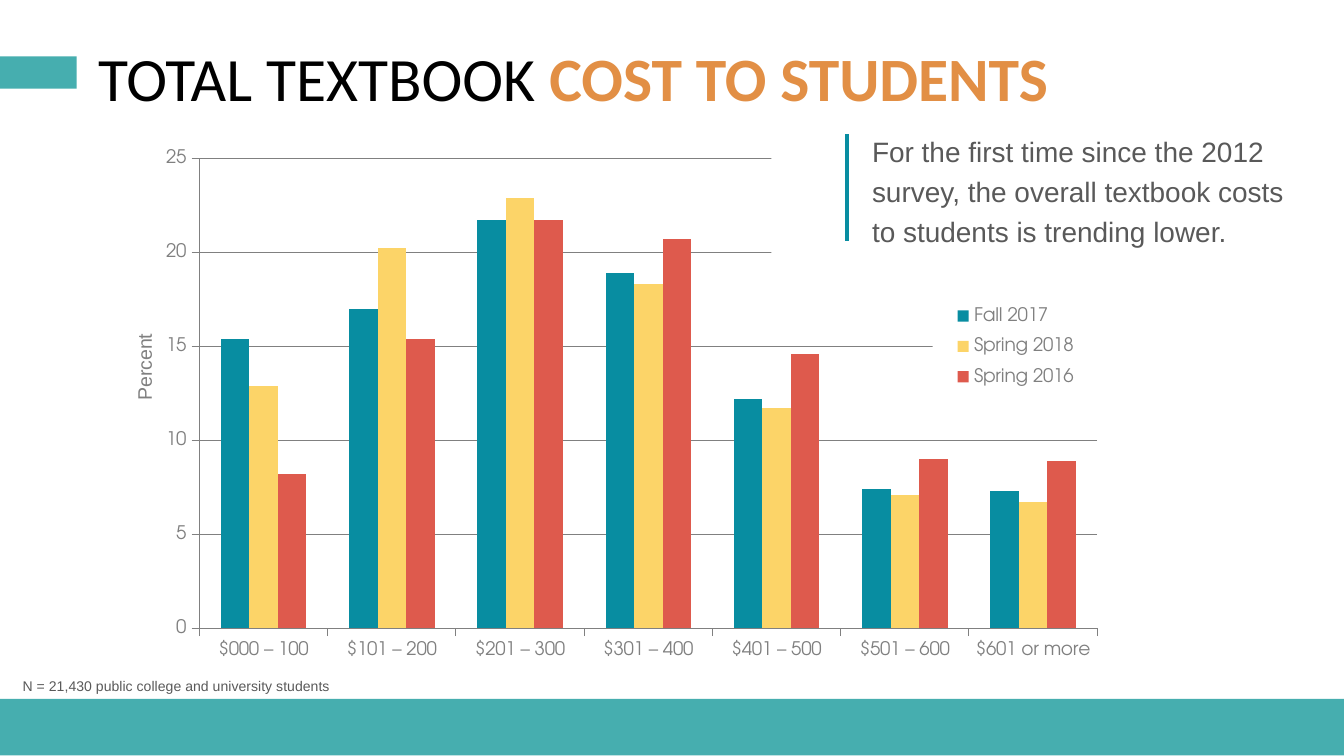
import pptx
import pptx.chart.data
import pptx.dml.color
import pptx.enum.chart
import pptx.enum.shapes
import pptx.enum.text
import pptx.oxml
import pptx.oxml.ns
import pptx.util
from pptx.util import Inches

TEAL, DARK_TEAL, ORANGE = "46AEAF", "088DA1", "E28F45"
GREY, TEXT_GREY = "808080", "595959"
CATEGORIES = ["$000 – 100", "$101 – 200", "$201 – 300", "$301 – 400",
              "$401 – 500", "$501 – 600", "$601 or more"]
SERIES = [
    ("Fall 2017", DARK_TEAL, (15.4, 17, 21.7, 18.9, 12.2, 7.4, 7.3)),
    ("Spring 2018", "FCD468", (12.9, 20.2, 22.9, 18.3, 11.7, 7.1, 6.7)),
    ("Spring 2016", "DE5A4D", (8.2, 15.4, 21.7, 20.7, 14.6, 9, 8.9)),
]


def color(value):
    return pptx.dml.color.RGBColor.from_string(value)


def paint(target, value):
    target.fill.solid()
    target.fill.fore_color.rgb = color(value)


def style_font(font, name, size, value, bold=False):
    font.name, font.size, font.bold = name, pptx.util.Pt(size), bold
    font.color.rgb = color(value)


def add_rectangle(page, box, fill):
    kind = pptx.enum.shapes.MSO_SHAPE.RECTANGLE
    shape = page.shapes.add_shape(kind, *map(Inches, box))
    shape.shadow.inherit = False
    paint(shape, fill)
    shape.line.fill.background()


def add_text(page, box, text, size, value, wrap=True):
    shape = page.shapes.add_textbox(*map(Inches, box))
    shape.text_frame.word_wrap = wrap
    para = shape.text_frame.paragraphs[0]
    para.line_spacing = 1.2
    span = para.add_run()
    span.text = text
    style_font(span.font, "Arial", size, value)
    return shape


def add_title(page, box):
    title = page.shapes.title
    title.left, title.top, title.width, title.height = map(Inches, box)
    title.text_frame.vertical_anchor = pptx.enum.text.MSO_ANCHOR.TOP
    para = title.text_frame.paragraphs[0]
    para.alignment = pptx.enum.text.PP_ALIGN.LEFT
    para.line_spacing = 0.9
    for text, value, bold in (("TOTAL TEXTBOOK ", "000000", False),
                              ("COST TO STUDENTS", ORANGE, True)):
        span = para.add_run()
        span.text = text
        style_font(span.font, "Calibri", 33, value, bold)


def make_layout(box, inner=False):
    """Manual layout, given in percent of the chart area."""
    x, y, width, height = (percent / 100 for percent in box)
    target = '<c:layoutTarget val="inner"/>' if inner else ""
    return pptx.oxml.parse_xml(
        f'<c:layout {pptx.oxml.ns.nsdecls("c")}><c:manualLayout>{target}'
        '<c:xMode val="edge"/><c:yMode val="edge"/>'
        f'<c:x val="{x}"/><c:y val="{y}"/><c:w val="{width}"/><c:h val="{height}"/>'
        '</c:manualLayout></c:layout>')


def style_legend(chart):
    chart.has_legend = True
    legend = chart.legend
    legend.position = pptx.enum.chart.XL_LEGEND_POSITION.RIGHT
    legend.include_in_layout = False
    element = chart.element.find(".//" + pptx.oxml.ns.qn("c:legend"))
    for old in element.findall(pptx.oxml.ns.qn("c:layout")):
        element.remove(old)
    element.find(pptx.oxml.ns.qn("c:legendPos")).addnext(
        make_layout((75, 30.2, 15.4, 20)))
    # White backing interrupts the gridline behind the legend
    element.find(pptx.oxml.ns.qn("c:overlay")).addnext(pptx.oxml.parse_xml(
        f'<c:spPr {pptx.oxml.ns.nsdecls("c", "a")}><a:solidFill>'
        '<a:srgbClr val="FFFFFF"/></a:solidFill><a:ln><a:noFill/></a:ln></c:spPr>'))


def add_cost_chart(page, box):
    data = pptx.chart.data.CategoryChartData()
    data.categories = CATEGORIES
    for name, fill, values in SERIES:
        data.add_series(name, values)
    kind = pptx.enum.chart.XL_CHART_TYPE.COLUMN_CLUSTERED
    chart = page.shapes.add_chart(kind, *map(Inches, box), data).chart
    chart.has_title = False
    style_font(chart.font, "TeX Gyre Adventor", 10, GREY)

    # Columns
    plot = chart.plots[0]
    plot.vary_by_categories = False
    plot.gap_width, plot.overlap = 150, 0
    for series, (name, fill, values) in zip(plot.series, SERIES):
        paint(series.format, fill)
        series.invert_if_negative = False

    # Axes and gridlines
    amount = chart.value_axis
    amount.minimum_scale, amount.maximum_scale, amount.major_unit = 0, 25, 5
    amount.has_major_gridlines = True
    for axis in (amount, chart.category_axis):
        axis.major_tick_mark = pptx.enum.chart.XL_TICK_MARK.OUTSIDE
    for part in (amount, chart.category_axis, amount.major_gridlines):
        part.format.line.color.rgb = color(GREY)
        part.format.line.width = pptx.util.Pt(0.5)

    # Plot area and legend
    area = chart.element.find(".//" + pptx.oxml.ns.qn("c:plotArea"))
    for old in area.findall(pptx.oxml.ns.qn("c:layout")):
        area.remove(old)
    area.insert(0, make_layout((6.8, 4.3, 83.5, 89.7), inner=True))
    style_legend(chart)


def add_callout(page, box):
    left, top, width, height = box
    add_text(page, (left + 0.09, top, width - 0.09, height),
             "For the first time since the 2012 survey, the overall textbook "
             "costs to students is trending lower.", 15, TEXT_GREY)
    rule = page.shapes.add_connector(
        pptx.enum.shapes.MSO_CONNECTOR.STRAIGHT,
        *map(Inches, (left, top + 0.1, left, top + 0.89)))
    rule.line.color.rgb = color(DARK_TEAL)
    rule.line.width = pptx.util.Pt(2)
    properties = rule.element.find(pptx.oxml.ns.qn("p:spPr"))
    properties.append(pptx.oxml.parse_xml(
        f'<a:effectLst {pptx.oxml.ns.nsdecls("a")}/>'))


def main():
    # Widescreen page, 16 to 9
    deck = pptx.Presentation()
    deck.slide_width = Inches(10)
    deck.slide_height = deck.slide_width * 9 // 16
    page = deck.slides.add_slide(deck.slide_layouts[5])

    # Bands and title
    add_rectangle(page, (0, 5.2, 10, 0.42), TEAL)
    add_rectangle(page, (0, 0.42, 0.57, 0.24), TEAL)
    add_title(page, (0.63, 0.31, 9.37, 0.57))

    # Chart with its axis label
    add_cost_chart(page, (0.94, 1.01, 8, 3.9))
    label = add_text(page, (0.7, 2.57, 0.71, 0.31), "Percent", 10.5, GREY, wrap=False)
    label.rotation = 270

    # Panel over the upper gridlines, note and callout
    add_rectangle(page, (5.74, 1.01, 3.55, 1.03), "FFFFFF")
    add_text(page, (0.07, 4.97, 2.51, 0.25),
             "N = 21,430 public college and university students",
             7.5, TEXT_GREY, wrap=False)
    add_callout(page, (6.3, 0.9, 3.36, 1.31))

    deck.save("out.pptx")


if __name__ == "__main__":
    main()
